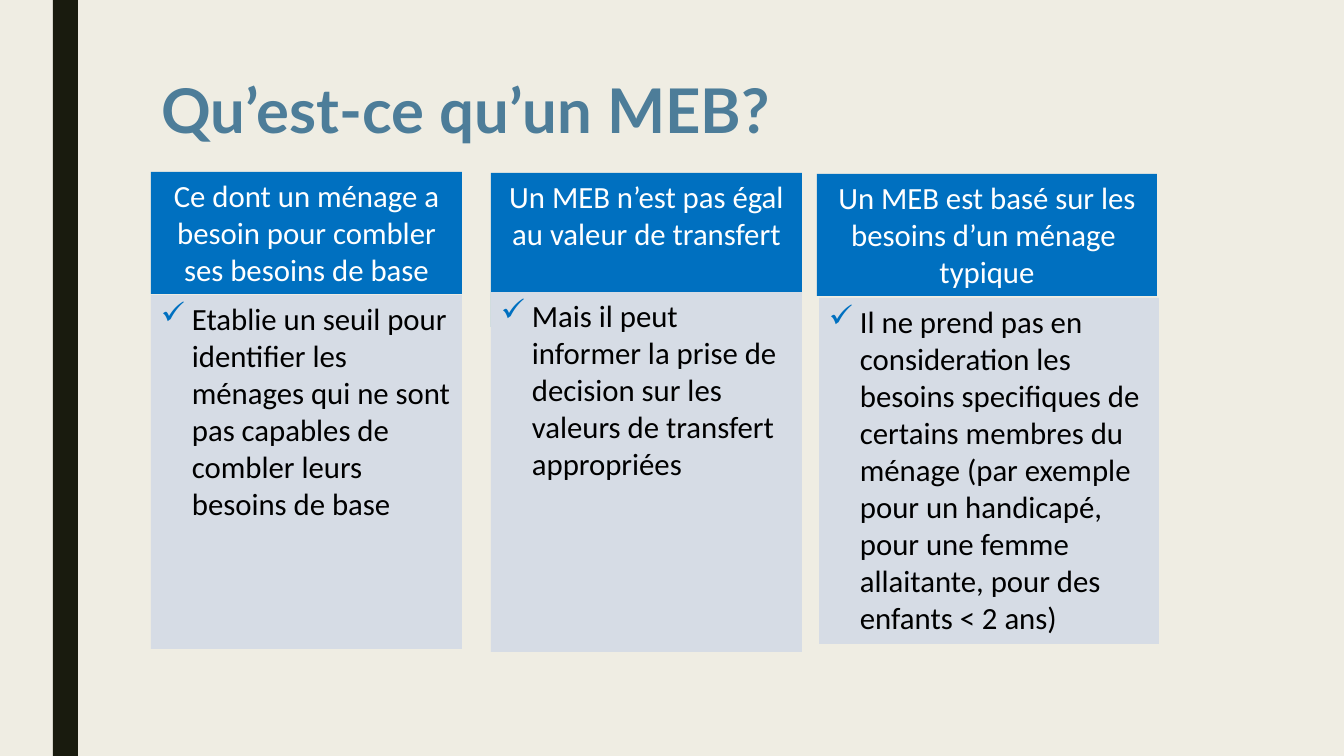
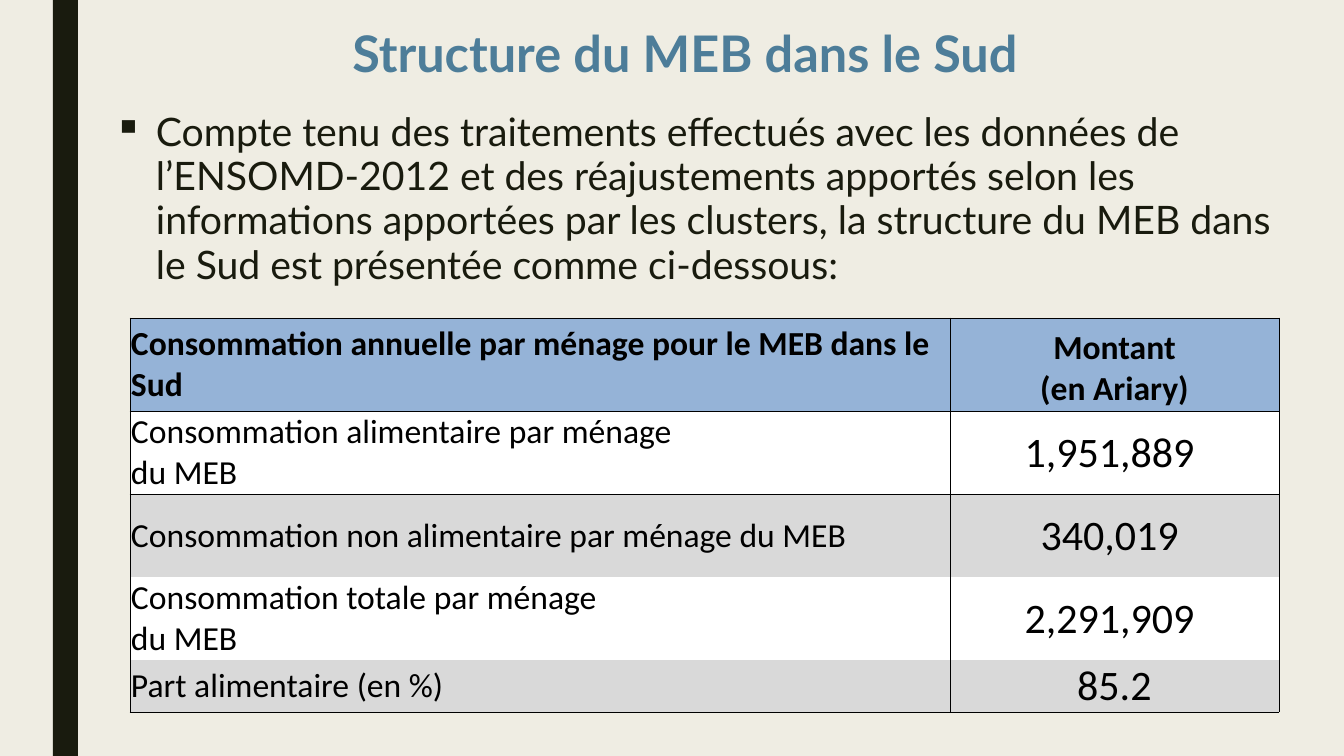
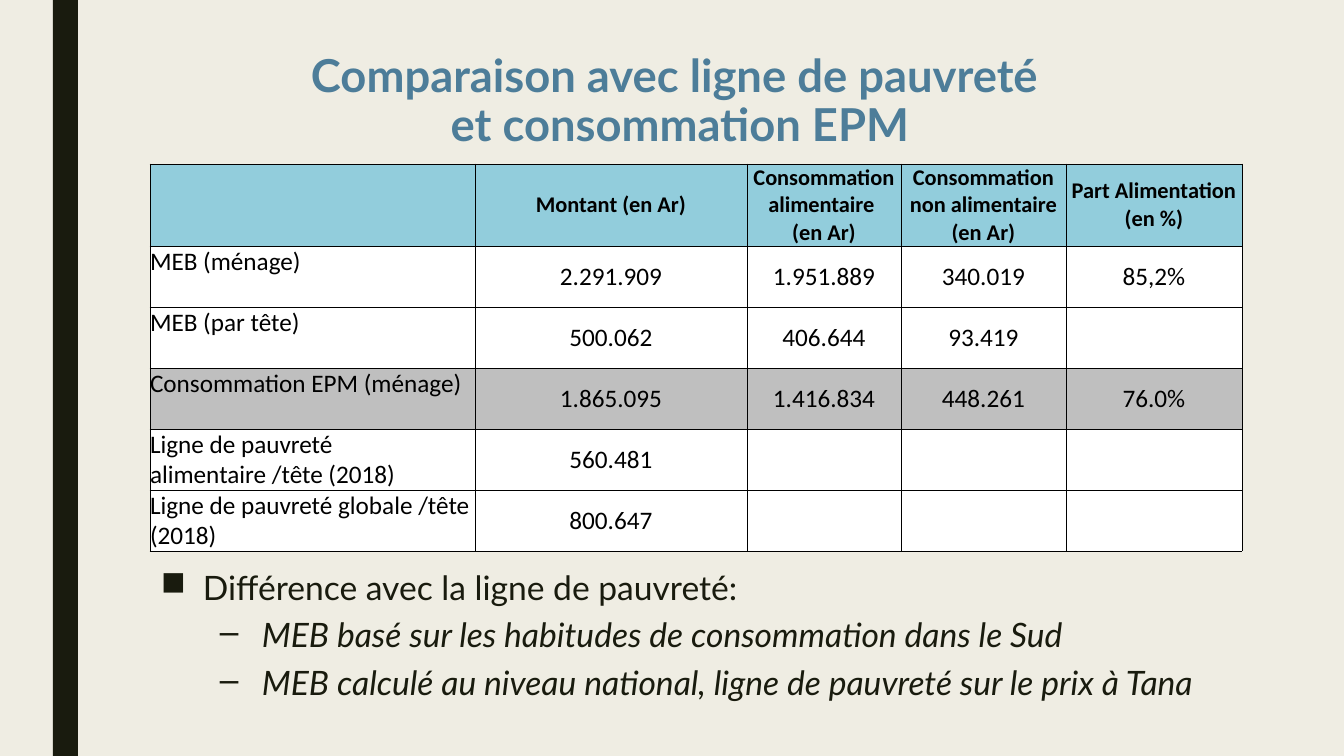
from lxml.etree import SubElement
from pptx import Presentation
from pptx.dml.color import RGBColor
from pptx.enum.shapes import MSO_SHAPE as Shape
from pptx.enum.text import MSO_ANCHOR as Anchor, MSO_AUTO_SIZE as Fit, PP_ALIGN as Align
from pptx.oxml.ns import qn
from pptx.util import Pt

PX = 914400 / 100.8
HUE = {
    "back": "EFEDE3", "dark": "191B0E", "title": "4D7D99", "blue": "0070C0",
    "pale": "D6DCE5", "white": "FFFFFF", "black": "000000", "steel": "95B3D7",
    "aqua": "92CDDC", "light": "D9D9D9", "grey": "BFBFBF",
}
RGB = {name: RGBColor.from_string(code) for name, code in HUE.items()}
PLAIN = "{2D5ABB26-0587-4C30-8999-92F81FD0307C}"


def style(par, size, hue, font="Calibri", bold=False, mark=None, left=0, hang=0, tint=None):
    """Format the runs of a paragraph and give it a bullet if mark is set."""
    for run in par.runs:
        run.font.size, run.font.name, run.font.bold = Pt(size), font, bold
        run.font.color.rgb = RGB[hue]
    if mark:
        prop = par._p.get_or_add_pPr()
        prop.set("marL", str(round(left * PX)))
        prop.set("indent", str(round(-hang * PX)))
        color = SubElement(prop, qn("a:buClr"))
        SubElement(color, qn("a:srgbClr"), val=HUE[tint or hue])
        SubElement(prop, qn("a:buChar"), char=mark)


def grid(slide, x, y, cols, rows, data, fills, sizes, pad, full):
    """Add a table; sizes are for head, label and value, full rules every cell."""
    box = [round(v * PX) for v in (x, y, sum(cols), sum(rows))]
    frame = slide.shapes.add_table(len(rows), len(cols), *box)
    frame.element.find(".//" + qn("a:tableStyleId")).text = PLAIN
    table = frame.table
    for col, width in zip(table.columns, cols):
        col.width = round(width * PX)
    for r, (height, texts) in enumerate(zip(rows, data)):
        table.rows[r].height = round(height * PX)
        sides = "LRTB" if full or r == 0 else "LR" + "T" * (r == 1) + "B" * (r == len(rows) - 1)
        for c, text in enumerate(texts):
            cell = table.cell(r, c)
            for side in sides:
                line = SubElement(cell._tc.get_or_add_tcPr(), qn("a:ln" + side), w="6350")
                paint = SubElement(line, qn("a:solidFill"))
                SubElement(paint, qn("a:srgbClr"), val=HUE["black"])
            cell.fill.solid()
            cell.fill.fore_color.rgb = RGB[fills[r]]
            cell.margin_left = cell.margin_right = cell.margin_top = round(pad * PX)
            cell.margin_bottom = 0
            cell.vertical_anchor = Anchor.MIDDLE
            cell.text_frame.text = text
            size = sizes[0] if r == 0 else sizes[1] if c == 0 else sizes[2]
            for par in cell.text_frame.paragraphs:
                par.alignment = Align.CENTER if c else Align.LEFT
                style(par, size, "black", bold=r == 0)
    return table


deck = Presentation()
deck.slide_width, deck.slide_height = round(1344 * PX), round(756 * PX)
master = deck.slide_master
master.background.fill.solid()
master.background.fill.fore_color.rgb = RGB["back"]

# Titles, one slide each
titles = [
    ("Qu’est-ce qu’un MEB?", (151, 76, 1058, 99), 44, Align.LEFT),
    ("Structure du MEB dans le Sud", (156, 24, 1058, 65), 36, Align.CENTER),
    ("Comparaison avec ligne de pauvreté \vet consommation EPM", (151, 49, 1058, 118), 32.4, Align.CENTER),
]
slides = []
for text, box, size, align in titles:
    slide = deck.slides.add_slide(deck.slide_layouts[5])
    title = slide.shapes.title
    title.left, title.top, title.width, title.height = [round(v * PX) for v in box]
    body = title.text_frame
    body.text = text
    body.auto_size, body.vertical_anchor = Fit.NONE, Anchor.TOP
    par = body.paragraphs[0]
    par.alignment, par.line_spacing = align, 0.89
    style(par, size, "title", "Lato", True)
    slides.append(slide)
intro, struct, compare = slides

# The side band belongs to the master
band = intro.shapes.add_shape(Shape.RECTANGLE, *[round(v * PX) for v in (53, 0, 25, 756)])
band.shadow.inherit = False
band.fill.solid()
band.fill.fore_color.rgb = RGB["dark"]
band.line.fill.background()
master.shapes.element.append(band.element)

# Slide 1: three cards
cards = [
    ((151, 172, 311, 122), "Ce dont un ménage a besoin pour combler ses besoins de base",
     (151, 295, 311, 354), "Etablie un seuil pour identifier les ménages qui ne sont pas "
     "capables de combler leurs besoins de base"),
    ((491, 173, 311, 154), "Un MEB n’est pas égal au valeur de transfert",
     (491, 292, 311, 360), "Mais il peut informer la prise de decision sur les valeurs de "
     "transfert appropriées"),
    ((817, 174, 340, 122), "Un MEB est basé sur les besoins d’un ménage \ntypique",
     (819, 298, 340, 346), "Il ne prend pas en consideration les besoins specifiques de "
     "certains membres du ménage (par exemple pour un handicapé, pour une femme "
     "allaitante, pour des enfants < 2 ans)"),
]
for top, head, low, note in cards:
    for box, text, fill in ((top, head, "blue"), (low, note, "pale")):
        card = intro.shapes.add_shape(Shape.RECTANGLE, *[round(v * PX) for v in box])
        card.shadow.inherit = False
        card.fill.solid()
        card.fill.fore_color.rgb = RGB[fill]
        card.line.fill.background()
        card.text_frame.text = text
        card.text_frame.vertical_anchor = Anchor.TOP
        for par in card.text_frame.paragraphs:
            if fill == "blue":
                par.alignment = Align.CENTER
                style(par, 22, "white")
            else:
                par.alignment = Align.LEFT
                style(par, 22, "black", mark="✓", left=31, hang=31, tint="blue")

# Bulleted text of slides 2 and 3: text, size, mark, left indent
lists = [
    (struct, (104, 106, 1215, 200), [
        ("Compte tenu des traitements effectués avec les données de l’ENSOMD-2012 et des "
         "réajustements apportés selon les informations apportées par les clusters, la "
         "structure du MEB dans le Sud est présentée comme ci-dessous:", 28, "▪", 42)]),
    (compare, (151, 565, 1116, 154), [
        ("Différence avec la ligne de pauvreté:", 24, "■", 42),
        ("MEB basé sur les habitudes de consommation dans le Sud", 24, "–", 101),
        ("MEB calculé au niveau national, ligne de pauvreté sur le prix à Tana", 24, "–", 101)]),
]
for slide, box, items in lists:
    body = slide.shapes.add_textbox(*[round(v * PX) for v in box]).text_frame
    body.word_wrap = True
    body.text = "\n".join(item[0] for item in items)
    for n, (par, (text, size, mark, left)) in enumerate(zip(body.paragraphs, items)):
        par.line_spacing = 0.94
        par.space_before, par.space_after = Pt(5 if n else 0), Pt(2)
        style(par, size, "dark", "Lato", mark=mark, left=left, hang=42)
        par.runs[0].font.italic = n > 0

# Slide 2: structure table
shares = [
    ("Consommation annuelle par ménage pour le MEB dans le Sud", "Montant\n(en Ariary)"),
    ("Consommation alimentaire par ménage\ndu MEB", "1,951,889 "),
    ("Consommation non alimentaire par ménage du MEB", "340,019 "),
    ("Consommation totale par ménage\ndu MEB", "2,291,909 "),
    ("Part alimentaire (en %)", "85.2"),
]
table = grid(struct, 130, 318, (820, 329), (93, 83, 83, 83, 52), shares,
             ("steel", "white", "light", "white", "light"), (24, 24, 30), 1, False)
table.cell(0, 1).margin_top = round(8 * PX)

# Slide 3: comparison table
lines = [
    ("", "Montant (en Ar)", "Consommation alimentaire \n(en Ar)",
     "Consommation non alimentaire\n(en Ar)", "Part Alimentation\n(en %)"),
    ("MEB (ménage)", "2.291.909", "1.951.889", "340.019", "85,2%"),
    ("MEB (par tête)", "500.062", "406.644", "93.419", ""),
    ("Consommation EPM (ménage)", "1.865.095", "1.416.834", "448.261", "76.0%"),
    ("Ligne de pauvreté alimentaire /tête (2018)", "560.481", "", "", ""),
    ("Ligne de pauvreté globale /tête (2018)", "800.647", "", "", ""),
]
table = grid(compare, 150, 164, (325, 272, 154, 165, 176), [82] + [61] * 5, lines,
             ("aqua", "white", "white", "grey", "white", "white"), (16, 18, 18), 0, True)
for r in range(1, len(lines)):
    table.cell(r, 0).vertical_anchor = Anchor.TOP

deck.save("out.pptx")
